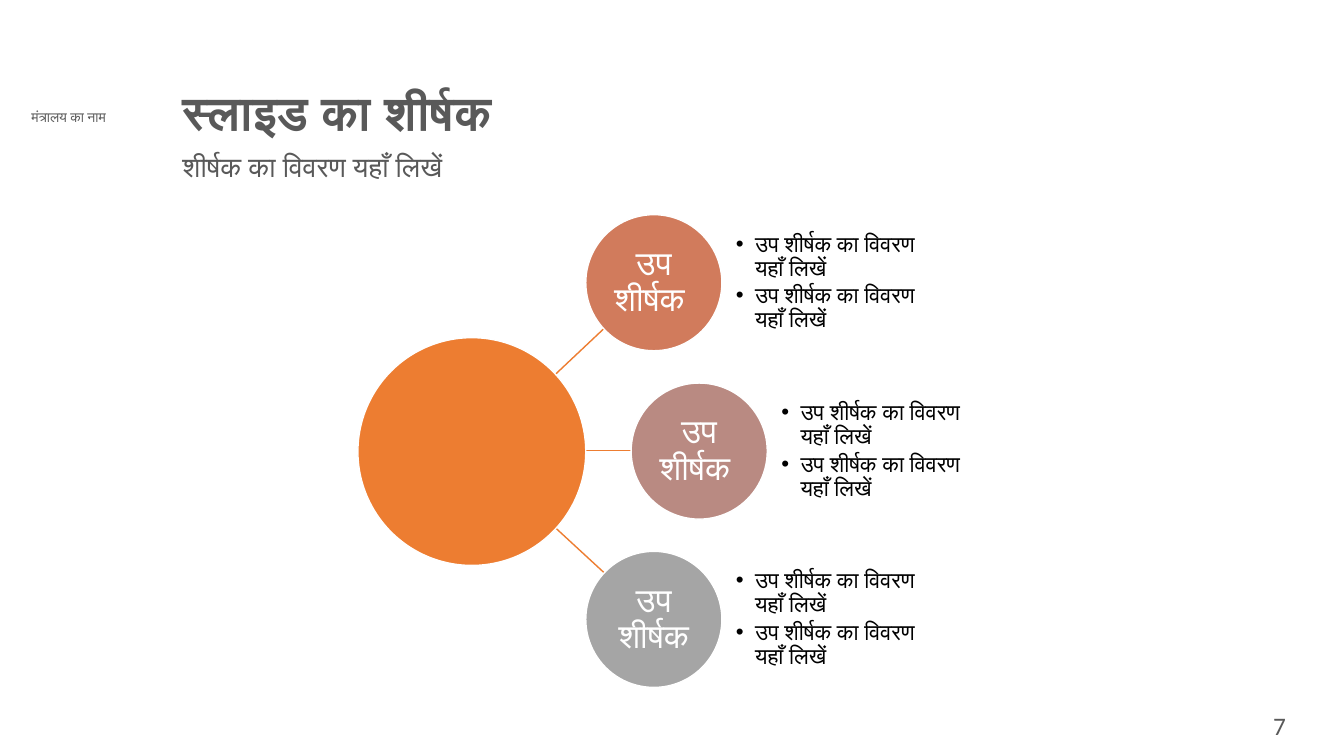
from dataclasses import dataclass

import lxml.etree
import pptx
import pptx.dml.color
import pptx.enum.shapes
import pptx.enum.text
import pptx.oxml.ns
import pptx.util

Inches = pptx.util.Inches
Align = pptx.enum.text.PP_ALIGN
Anchor = pptx.enum.text.MSO_ANCHOR


@dataclass(frozen=True)
class Theme:
    font: str = "Calibri"
    label_font: str = "Lato"
    heading: str = "595959"
    body: str = "000000"
    white: str = "FFFFFF"
    accent: str = "ED7D31"
    title_size: float = 34
    subtitle_size: float = 20
    circle_size: float = 24
    list_size: float = 16
    number_size: float = 18
    label_size: float = 10
    line_spacing: float = 0.9


@dataclass(frozen=True)
class Box:
    left: float
    top: float
    width: float
    height: float

    def lengths(self) -> tuple:
        return tuple(Inches(value) for value in (self.left, self.top, self.width, self.height))


@dataclass(frozen=True)
class Branch:
    left: float
    colour: str
    caption: str
    line_start: tuple[float, float]
    line_end: tuple[float, float]


THEME = Theme()
CIRCLE = 1.35
FIRST_TOP = 2.13
BRANCH_STEP = 1.67
LIST_GAP = 0.14
LIST_WIDTH = 2.03
LIST_ITEMS = ("उप शीर्षक का विवरण यहाँ लिखें",) * 2
HUB = Box(3.55, 3.35, 2.26, 2.26)
BRANCHES = (
    Branch(5.81, "D17B5C", "उप शीर्षक ", (5.47, 3.75), (5.99, 3.26)),
    Branch(6.26, "B98A82", "उप शीर्षक ", (5.47, 4.47), (6.26, 4.47)),
    Branch(5.81, "A5A5A5", "उप शीर्षक", (5.47, 5.2), (5.99, 5.68)),
)


def rgb(colour: str):
    return pptx.dml.color.RGBColor.from_string(colour)


def prepare_frame(shape, anchor, inset: float | None = None):
    frame = shape.text_frame
    frame.word_wrap = True
    frame.auto_size = pptx.enum.text.MSO_AUTO_SIZE.NONE
    frame.vertical_anchor = anchor
    if inset is not None:
        frame.margin_left = frame.margin_right = Inches(inset)
        frame.margin_top = frame.margin_bottom = Inches(inset)
    return frame


def write(paragraph, text: str, size: float, colour: str, align=Align.LEFT,
          font: str = THEME.font, bold: bool = False, spacing: float = 1.0) -> None:
    paragraph.alignment = align
    paragraph.line_spacing = spacing
    paragraph.space_before = pptx.util.Pt(0)
    run = paragraph.add_run()
    run.text = text
    run.font.name = font
    run.font.size = pptx.util.Pt(size)
    run.font.bold = bold
    run.font.color.rgb = rgb(colour)


def set_bullet(paragraph, character: str | None, indent: float) -> None:
    properties = paragraph._p.get_or_add_pPr()
    properties.set("marL", str(Inches(indent)))
    properties.set("indent", str(-Inches(indent)))
    qn = pptx.oxml.ns.qn
    if character:
        lxml.etree.SubElement(properties, qn("a:buFont")).set("typeface", "Arial")
        lxml.etree.SubElement(properties, qn("a:buChar")).set("char", character)
    else:
        lxml.etree.SubElement(properties, qn("a:buNone"))


def fill_placeholder(shape, box: Box, text: str, size: float, bold: bool) -> None:
    shape.left, shape.top, shape.width, shape.height = box.lengths()
    paragraph = prepare_frame(shape, Anchor.TOP).paragraphs[0]
    set_bullet(paragraph, None, 0)
    write(paragraph, text, size, THEME.heading, bold=bold, spacing=THEME.line_spacing)


def add_label(slide, box: Box, text: str, size: float, font: str) -> None:
    shape = slide.shapes.add_textbox(*box.lengths())
    paragraph = prepare_frame(shape, Anchor.TOP).paragraphs[0]
    write(paragraph, text, size, THEME.heading, Align.CENTER, font)


def add_circle(slide, box: Box, colour: str):
    shape = slide.shapes.add_shape(pptx.enum.shapes.MSO_SHAPE.OVAL, *box.lengths())
    shape.shadow.inherit = False
    shape.fill.solid()
    shape.fill.fore_color.rgb = rgb(colour)
    shape.line.color.rgb = rgb(THEME.white)
    shape.line.width = pptx.util.Pt(1)
    return shape


def add_spoke(slide, branch: Branch) -> None:
    points = [Inches(value) for value in branch.line_start + branch.line_end]
    connector = slide.shapes.add_connector(pptx.enum.shapes.MSO_CONNECTOR.STRAIGHT, *points)
    connector.line.color.rgb = rgb(THEME.accent)
    connector.line.width = pptx.util.Pt(1)
    lxml.etree.SubElement(connector._element.spPr, pptx.oxml.ns.qn("a:effectLst"))


def add_list(slide, box: Box) -> None:
    shape = slide.shapes.add_textbox(*box.lengths())
    frame = prepare_frame(shape, Anchor.MIDDLE, 0)
    for index, item in enumerate(LIST_ITEMS):
        paragraph = frame.add_paragraph() if index else frame.paragraphs[0]
        set_bullet(paragraph, "•", 0.19)
        paragraph.space_after = pptx.util.Pt(2.5)
        write(paragraph, item, THEME.list_size, THEME.body, spacing=THEME.line_spacing)


def add_branch(slide, branch: Branch, top: float) -> None:
    circle = add_circle(slide, Box(branch.left, top, CIRCLE, CIRCLE), branch.colour)
    paragraph = prepare_frame(circle, Anchor.MIDDLE, 0.02).paragraphs[0]
    write(paragraph, branch.caption, THEME.circle_size, THEME.white, Align.CENTER,
          spacing=THEME.line_spacing)
    add_list(slide, Box(branch.left + CIRCLE + LIST_GAP, top, LIST_WIDTH, CIRCLE))


def main() -> None:
    presentation = pptx.Presentation()
    presentation.slide_width = Inches(13.33)
    presentation.slide_height = Inches(7.5)
    slide = presentation.slides.add_slide(presentation.slide_layouts[1])

    fill_placeholder(slide.shapes.title, Box(1.71, 0.84, 9.61, 0.55),
                     "स्लाइड का शीर्षक", THEME.title_size, True)
    fill_placeholder(slide.placeholders[1], Box(1.71, 1.47, 9.61, 0.63),
                     "शीर्षक का विवरण यहाँ लिखें", THEME.subtitle_size, False)
    add_label(slide, Box(0.03, 1.03, 1.3, 0.27), "मंत्रालय का नाम",
              THEME.label_size, THEME.label_font)

    for branch in BRANCHES:
        add_spoke(slide, branch)
    add_circle(slide, HUB, THEME.accent)
    for index, branch in enumerate(BRANCHES):
        add_branch(slide, branch, FIRST_TOP + index * BRANCH_STEP)

    add_label(slide, Box(12.1, 7, 1.18, 0.45), "7", THEME.number_size, THEME.font)
    presentation.save("out.pptx")


if __name__ == "__main__":
    main()
